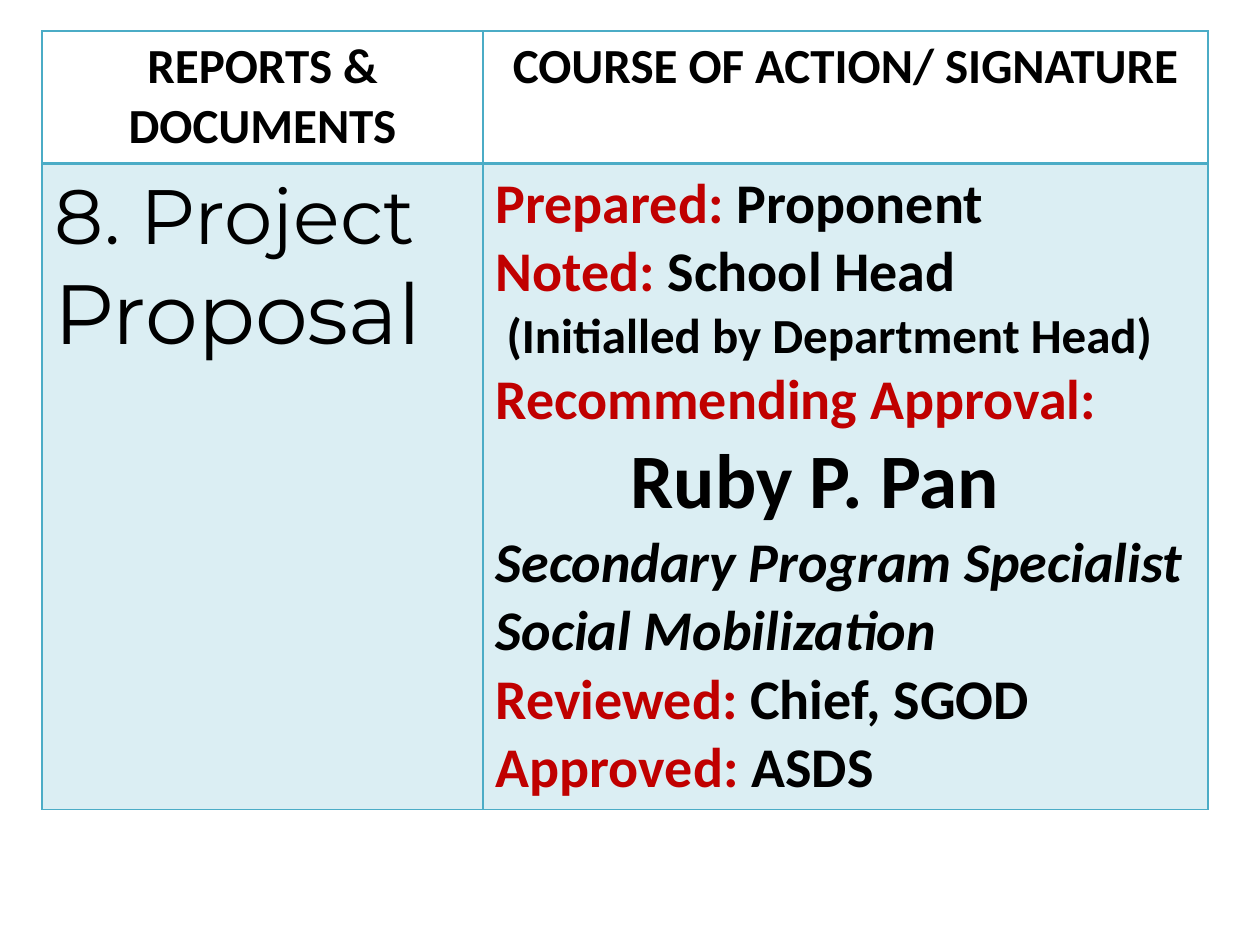
from dataclasses import dataclass

from lxml.etree import SubElement
from pptx import Presentation
from pptx.dml.color import RGBColor
from pptx.enum.text import PP_ALIGN as Align
from pptx.oxml.ns import qn
from pptx.util import Emu, Pt

PX_PER_INCH = 126
BLACK, RED, TEAL, WHITE = "000000", "C00000", "4BACC6", "FFFFFF"


@dataclass(frozen=True)
class Run:
    text: str
    size: int = 32
    color: str = BLACK
    font: str = "Calibri"
    bold: bool = True
    italic: bool = False


@dataclass(frozen=True)
class Line:
    runs: tuple[Run, ...]
    align: Align = Align.LEFT
    indent: int = 0


@dataclass(frozen=True)
class Cell:
    lines: tuple[Line, ...]
    fill: str
    opacity: int
    borders: dict[str, int]


def px(length: int) -> Emu:
    """Turn whole pixels into EMU."""
    return Emu(round(length * 914400 / PX_PER_INCH))


def rgb(color: str) -> RGBColor:
    """Turn a hex string into a colour."""
    return RGBColor.from_string(color)


def header(text: str) -> Cell:
    """Describe a column heading."""
    line = Line((Run(text, 28),), Align.CENTER)
    return Cell((line,), WHITE, 100, {"L": 1, "R": 1, "T": 1, "B": 2})


def body(*lines: Line) -> Cell:
    """Describe a tinted body cell."""
    return Cell(lines, TEAL, 20, {"L": 1, "R": 1, "T": 2, "B": 1})


def step(label: str, signatory: str = "") -> Line:
    """Describe a red label with the office that signs."""
    runs = (Run(label, color=RED), Run(signatory))
    return Line(tuple(run for run in runs if run.text))


def add_line(paragraph, line: Line) -> None:
    """Write one formatted paragraph."""
    paragraph.alignment = line.align
    if line.indent:
        paragraph._p.get_or_add_pPr().set("marL", str(px(line.indent)))
    for part in line.runs:
        run = paragraph.add_run()
        run.text = part.text
        run.font.color.rgb = rgb(part.color)
        values = {"size": Pt(part.size), "name": part.font,
                  "bold": part.bold, "italic": part.italic}
        for name, value in values.items():
            setattr(run.font, name, value)


def draw_cell(table_cell, cell: Cell) -> None:
    """Fill, border and write one table cell."""
    properties = table_cell._tc.get_or_add_tcPr()
    for side, width in cell.borders.items():
        border = SubElement(properties, qn(f"a:ln{side}"), w=str(Pt(width)))
        SubElement(SubElement(border, qn("a:solidFill")), qn("a:srgbClr"), val=TEAL)
    table_cell.fill.solid()
    table_cell.fill.fore_color.rgb = rgb(cell.fill)
    if cell.opacity < 100:
        color = properties.find(qn("a:solidFill")).find(qn("a:srgbClr"))
        SubElement(color, qn("a:alpha"), val=str(cell.opacity * 1000))
    frame = table_cell.text_frame
    for index, line in enumerate(cell.lines):
        add_line(frame.add_paragraph() if index else frame.paragraphs[0], line)


COLUMN_WIDTHS = (441, 725)
ROW_HEIGHTS = (132, 646)
ROWS = (
    (header("REPORTS & DOCUMENTS"), header("COURSE OF ACTION/ SIGNATURE")),
    (
        body(Line((Run("8. Project ", 44, font="Montserrat", bold=False),
                   Run("Proposal", 48, font="Montserrat", bold=False)))),
        body(
            step("Prepared: ", "Proponent"),
            step("Noted: ", "School Head"),
            Line((Run(" (Initialled by Department Head)", 28),)),
            step("Recommending Approval:"),
            Line((Run("Ruby P. Pan", 44),), indent=135),
            Line((Run("Secondary Program Specialist", italic=True),)),
            Line((Run("Social Mobilization", italic=True),)),
            step("Reviewed: ", "Chief, SGOD"),
            step("Approved: ", "ASDS"),
        ),
    ),
)


def main() -> None:
    """Build the slide with the signature table."""
    presentation = Presentation()
    presentation.slide_width, presentation.slide_height = px(1260), px(945)
    slide = presentation.slides.add_slide(presentation.slide_layouts[6])
    table = slide.shapes.add_table(
        len(ROW_HEIGHTS), len(COLUMN_WIDTHS), px(42), px(31),
        px(sum(COLUMN_WIDTHS)), px(sum(ROW_HEIGHTS))).table
    table.horz_banding = False
    for column, width in zip(table.columns, COLUMN_WIDTHS):
        column.width = px(width)
    for row, height, cells in zip(table.rows, ROW_HEIGHTS, ROWS):
        row.height = px(height)
        for table_cell, cell in zip(row.cells, cells):
            draw_cell(table_cell, cell)
    presentation.save("out.pptx")


if __name__ == "__main__":
    main()
